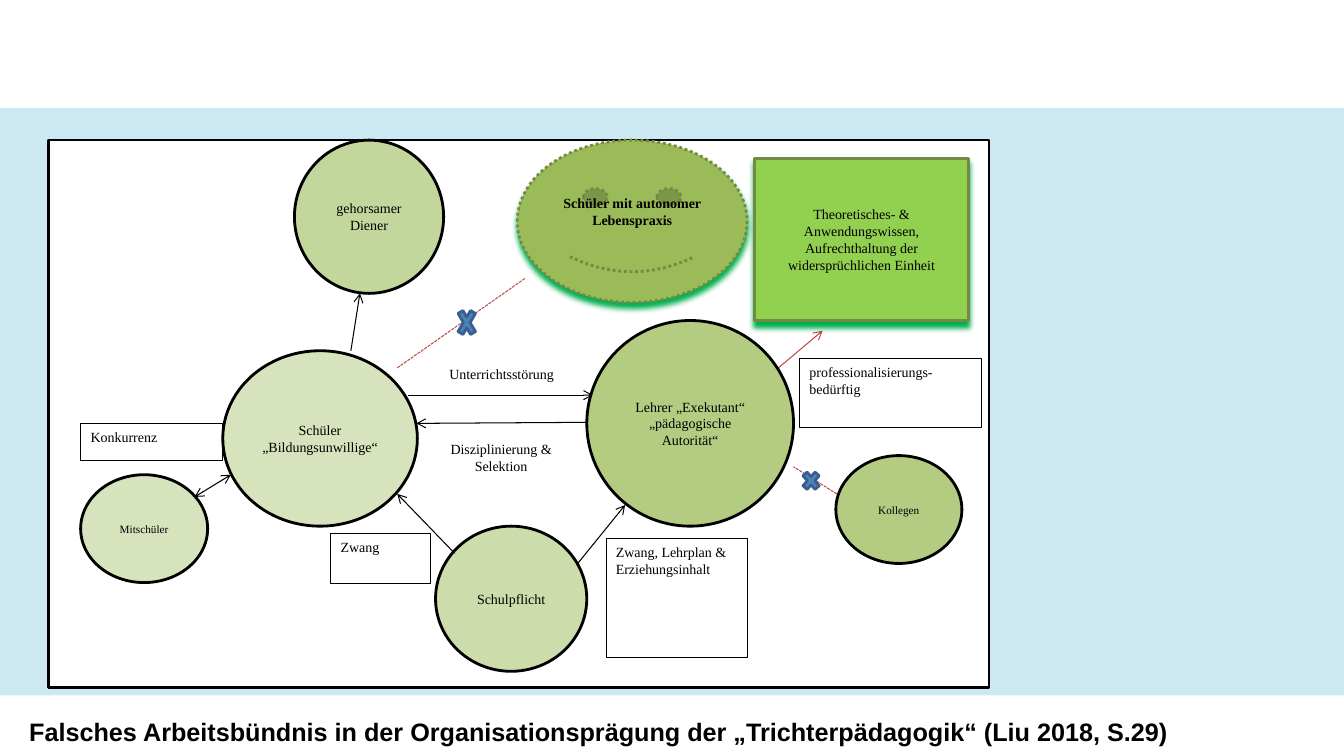
from lxml.etree import SubElement
from pptx import Presentation
from pptx.dml.color import RGBColor
from pptx.enum.dml import MSO_LINE as Dash
from pptx.enum.shapes import MSO_CONNECTOR as Connector, MSO_SHAPE as Preset
from pptx.enum.text import MSO_ANCHOR as Anchor, PP_ALIGN as Align
from pptx.oxml.ns import qn
from pptx.util import Inches, Pt

WIDTH, HEIGHT = 13.33, 7.5
BLACK, WHITE, BLUE, GREEN, OLIVE, RED = "000000", "FFFFFF", "008FBE", "9BBB59", "738A42", "BE4B48"

TITLE = "Falsches Arbeitsbündnis in der Organisationsprägung der „Trichterpädagogik“ (Liu 2018, S.29)"
BAND = (0, 1.07, WIDTH, 5.83)
FRAME = (0.48, 1.39, 9.33, 5.43)

BOXED_LABELS = [
    ("professionalisierungs-bedürftig", (7.93, 3.56, 1.8, 0.68)),
    ("Zwang, Lehrplan & Erziehungsinhalt", (6.01, 5.34, 1.4, 1.18)),
    ("Zwang", (3.28, 5.29, 0.99, 0.5)),
    ("Konkurrenz", (0.8, 4.2, 1.41, 0.37)),
]
ARROW_LABELS = [
    ("Unterrichtsstörung", (4, 3.39, 1.95, 0.45), Anchor.BOTTOM),
    ("Disziplinierung & Selektion", (4.13, 4.32, 1.68, 0.69), Anchor.TOP),
]
ARROWS = [
    ((7.72, 3.65), (8.16, 3.28), RED, ["tailEnd"]),
    ((4.05, 3.92), (5.88, 3.92), BLACK, ["tailEnd"]),
    ((5.82, 4.19), (4.13, 4.2), BLACK, ["tailEnd"]),
    ((3.48, 3.48), (3.57, 2.91), BLACK, ["tailEnd"]),
    ((5.73, 5.59), (6.2, 5.01), BLACK, ["tailEnd"]),
    ((4.51, 5.49), (3.94, 4.9), BLACK, ["tailEnd"]),
    ((1.93, 4.93), (2.29, 4.71), BLACK, ["headEnd", "tailEnd"]),
]
BROKEN_LINKS = [
    ((3.94, 3.65), (5.21, 2.76), (4.51, 3, 0.24, 0.4)),
    ((8.3, 4.9), (7.87, 4.63), (7.93, 4.64, 0.23, 0.26)),
]
CIRCLES = [
    ("gehorsamer Diener", (2.92, 1.39, 1.48, 1.52), 60, 10),
    ("Kollegen", (8.29, 4.52, 1.25, 1.07), 75, 8),
    ("Lehrer „Exekutant“\n„pädagogische Autorität“", (5.82, 3.18, 2.05, 2.04), 75, 10),
    ("Schulpflicht", (4.32, 5.22, 1.5, 1.44), 50, 10),
    ("Schüler „Bildungsunwillige“", (2.21, 3.48, 1.93, 1.74), 40, 10),
    ("Mitschüler", (0.8, 4.71, 1.26, 1.07), 40, 8),
]
KNOWLEDGE = ("Theoretisches- & Anwendungswissen, Aufrechthaltung der widersprüchlichen Einheit",
             (7.48, 1.57, 2.13, 1.61))
AUTONOMOUS = ("Schüler mit autonomer Lebenspraxis", (5.13, 1.39, 2.28, 1.61))


def color(value):
    return RGBColor.from_string(value)


def write(shape, text, size=10, font="Times New Roman", bold=False, align=Align.CENTER,
          anchor=Anchor.MIDDLE, spacing=None):
    frame = shape.text_frame
    frame.word_wrap = True
    frame.vertical_anchor = anchor
    frame.text = text
    for paragraph in frame.paragraphs:
        paragraph.alignment = align
        paragraph.line_spacing = spacing
        paragraph.font.size = Pt(size)
        paragraph.font.name = font
        paragraph.font.bold = bold
        paragraph.font.color.rgb = color(BLACK)
    return frame


def add_shape(preset, box, fill, line=None, width=2, opacity=100, glow=None):
    shape = slide.shapes.add_shape(preset, *map(Inches, box))
    shape.shadow.inherit = False
    shape.fill.solid()
    shape.fill.fore_color.rgb = color(fill)
    if opacity < 100:
        fill_color = shape.fill._xPr.find(qn("a:solidFill"))[0]
        SubElement(fill_color, qn("a:alpha"), val=str(opacity * 1000))
    if line:
        shape.line.color.rgb = color(line)
        shape.line.width = Pt(width)
    else:
        shape.line.fill.background()
    if glow:
        effects = shape._element.spPr.find(qn("a:effectLst"))
        shadow = SubElement(effects, qn("a:outerShdw"), blurRad=str(Pt(4)), dist=str(Pt(4)),
                            dir="5400000", algn="t", rotWithShape="0")
        SubElement(shadow, qn("a:srgbClr"), val=glow)
    return shape


def add_line(start, end, line, ends=(), dash=None):
    connector = slide.shapes.add_connector(Connector.STRAIGHT, *map(Inches, start + end))
    connector.line.color.rgb = color(line)
    connector.line.width = Pt(0.75)
    if dash:
        connector.line.dash_style = dash
    properties = connector._element.spPr
    for name in ends:
        SubElement(properties.find(qn("a:ln")), qn("a:" + name), type="arrow")
    SubElement(properties, qn("a:effectLst"))


presentation = Presentation()
presentation.slide_width, presentation.slide_height = Inches(WIDTH), Inches(HEIGHT)
slide = presentation.slides.add_slide(presentation.slide_layouts[6])

add_shape(Preset.RECTANGLE, BAND, BLUE, opacity=20)
title = slide.shapes.add_textbox(*map(Inches, (0.29, 7, 11.97, 0.48)))
title_frame = write(title, TITLE, size=18, font="Arial", bold=True, align=Align.LEFT, spacing=1.1)
title_frame.margin_left = title_frame.margin_right = 0
title_frame.margin_top = title_frame.margin_bottom = 0

add_shape(Preset.RECTANGLE, FRAME, WHITE, BLACK)
for text, box in BOXED_LABELS:
    label = add_shape(Preset.RECTANGLE, box, WHITE, BLACK, width=0.5)
    write(label, text, align=Align.LEFT, anchor=Anchor.TOP)
for text, box, anchor in ARROW_LABELS:
    write(add_shape(Preset.RECTANGLE, box, WHITE), text, anchor=anchor)
for start, end, line, ends in ARROWS:
    add_line(start, end, line, ends)

text, box = KNOWLEDGE
write(add_shape(Preset.RECTANGLE, box, "92D050", OLIVE, glow="00B050"), text)
text, box = AUTONOMOUS
smiley = add_shape(Preset.SMILEY_FACE, box, GREEN, OLIVE, glow="00B050")
smiley.line.dash_style = Dash.ROUND_DOT
write(smiley, text, bold=True).margin_bottom = Inches(0.24)

for text, box, opacity, size in CIRCLES:
    write(add_shape(Preset.OVAL, box, GREEN, BLACK, opacity=opacity), text, size=size)
for start, end, cross in BROKEN_LINKS:
    add_line(start, end, RED, dash=Dash.SQUARE_DOT)
    add_shape(Preset.MATH_MULTIPLY, cross, "4F81BD", "3A5F8C")

presentation.save("out.pptx")
